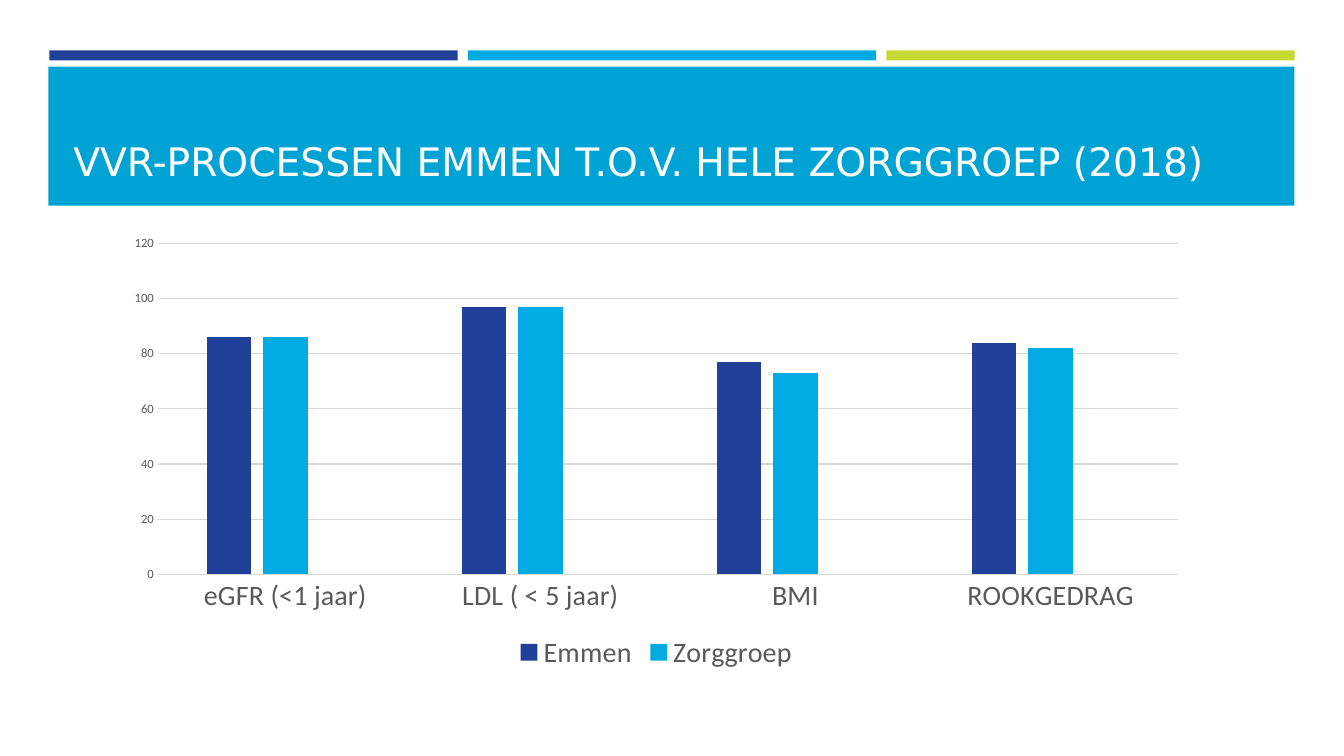
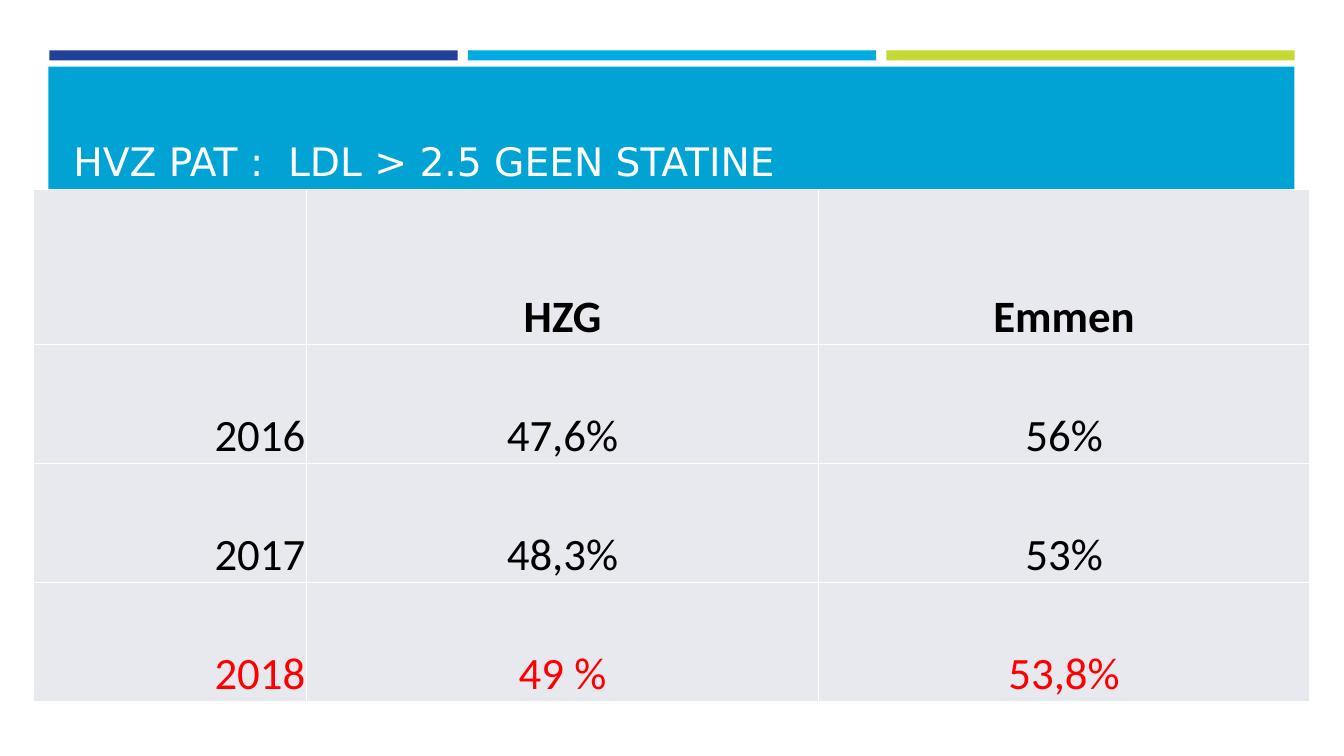
from lxml.etree import SubElement
from pptx import Presentation
from pptx.chart.data import CategoryChartData
from pptx.dml.color import RGBColor
from pptx.enum.chart import XL_CHART_TYPE, XL_LEGEND_POSITION, XL_TICK_MARK
from pptx.enum.shapes import MSO_SHAPE
from pptx.enum.text import MSO_ANCHOR, PP_ALIGN
from pptx.oxml import parse_xml
from pptx.oxml.ns import nsdecls, qn
from pptx.util import Inches, Pt

# Shared colours and fonts
NAVY = RGBColor(0x21, 0x40, 0x9A)
SKY = RGBColor(0x00, 0xAB, 0xE3)
LIME = RGBColor(0xC4, 0xD9, 0x34)
BLUE = RGBColor(0x00, 0xA3, 0xD4)
WHITE = RGBColor(0xFF, 0xFF, 0xFF)
BLACK = RGBColor(0, 0, 0)
RED = RGBColor(0xFF, 0, 0)
GREY = RGBColor(0x59, 0x59, 0x59)
RULE = RGBColor(0xD9, 0xD9, 0xD9)
PALE = RGBColor(0xE8, 0xE8, 0xEF)
HEAD, BODY = "DejaVu Sans", "Calibri"


def put(item, **vals):
    for key, val in vals.items():
        setattr(item, key, val)


def style(font, size, color, name=BODY, bold=False):
    put(font, size=Pt(size), name=name, bold=bold)
    font.color.rgb = color


def rule(line):
    line.color.rgb = RULE
    line.width = Pt(0.75)


def border(cell, color):
    props = cell._tc.get_or_add_tcPr()
    for side in "LRTB":
        props.append(parse_xml(
            f'<a:ln{side} {nsdecls("a")} w="12700"><a:solidFill>'
            f'<a:srgbClr val="{color}"/></a:solidFill></a:ln{side}>'))


class Deck:
    def __init__(self):
        self.prs = Presentation()
        put(self.prs, slide_width=Inches(13.33), slide_height=Inches(7.5))

    def slide(self, title):
        page = self.prs.slides.add_slide(self.prs.slide_layouts[6])
        self.shapes = page.shapes
        # Three strips above the title band
        for i, color in enumerate((NAVY, SKY, LIME)):
            self.rect(0.49 + i * 4.15, 0.5, 4.05, 0.1, color)
        self.rect(0.48, 0.66, 12.36, 1.38, BLUE)
        self.title(title)

    def rect(self, x, y, w, h, color):
        box = self.shapes.add_shape(
            MSO_SHAPE.RECTANGLE, Inches(x), Inches(y), Inches(w), Inches(h))
        box.shadow.inherit = False
        box.fill.solid()
        box.fill.fore_color.rgb = color
        box.line.fill.background()

    def title(self, text):
        box = self.shapes.add_textbox(
            Inches(0.63), Inches(0.8), Inches(12.06), Inches(1.08))
        frame = box.text_frame
        put(frame, word_wrap=True, vertical_anchor=MSO_ANCHOR.BOTTOM, text=text)
        style(frame.paragraphs[0].runs[0].font, 28, WHITE, HEAD)

    def chart(self, x, y, w, h, cats, series):
        data = CategoryChartData()
        data.categories = cats
        for name, vals, _ in series:
            data.add_series(name, vals)
        chart = self.shapes.add_chart(
            XL_CHART_TYPE.COLUMN_CLUSTERED, Inches(x), Inches(y),
            Inches(w), Inches(h), data).chart
        put(chart, has_title=False, has_legend=True)
        style(chart.font, 10, BLACK)

        # Columns
        plot = chart.plots[0]
        put(plot, gap_width=219, overlap=-27, vary_by_categories=False)
        for bar, (_, _, color) in zip(plot.series, series):
            bar.format.fill.solid()
            bar.format.fill.fore_color.rgb = color

        # Axes
        for axis, size in ((chart.category_axis, 20), (chart.value_axis, 9)):
            put(axis, major_tick_mark=XL_TICK_MARK.NONE,
                minor_tick_mark=XL_TICK_MARK.NONE)
            style(axis.tick_labels.font, size, GREY)
        rule(chart.category_axis.format.line)
        axis = chart.value_axis
        put(axis, minimum_scale=0, maximum_scale=120, major_unit=20)
        axis.format.line.fill.background()
        rule(axis.major_gridlines.format.line)

        # Legend, without the empty series
        legend = chart.legend
        put(legend, position=XL_LEGEND_POSITION.BOTTOM, include_in_layout=False)
        style(legend.font, 20, GREY)
        place = legend._element.find(qn("c:legendPos"))
        for i, (_, vals, _) in enumerate(series):
            if not any(vals):
                entry = SubElement(legend._element, qn("c:legendEntry"))
                SubElement(entry, qn("c:idx")).set("val", str(i))
                SubElement(entry, qn("c:delete")).set("val", "1")
                place.addnext(entry)

    def table(self, x, y, cols, tall, rows):
        table = self.shapes.add_table(
            len(rows), len(cols), Inches(x), Inches(y),
            Inches(sum(cols)), Inches(sum(tall))).table
        put(table, first_row=False, horz_banding=False)
        for col, w in zip(table.columns, cols):
            col.width = Inches(w)
        for row, h in zip(table.rows, tall):
            row.height = Inches(h)
        for r, row in enumerate(rows):
            color = RED if r == len(rows) - 1 else BLACK
            for c, text in enumerate(row):
                self.cell(table.cell(r, c), text, color, bold=r == 0,
                          align=PP_ALIGN.CENTER if c else PP_ALIGN.RIGHT)

    def cell(self, cell, text, color, bold, align):
        edge = Inches(0.01)
        put(cell, vertical_anchor=MSO_ANCHOR.BOTTOM, margin_left=edge,
            margin_right=edge, margin_top=edge, margin_bottom=0)
        border(cell, WHITE)
        cell.fill.solid()
        cell.fill.fore_color.rgb = PALE
        if text:
            cell.text = text
            para = cell.text_frame.paragraphs[0]
            para.alignment = align
            style(para.runs[0].font, 32, color, bold=bold)


def main():
    deck = Deck()

    # Processes compared; the empty series keeps room beside each pair
    deck.slide("VVR-PROCESSEN EMMEN T.O.V. HELE ZORGGROEP (2018)")
    deck.chart(
        1.12, 2.25, 10.78, 4.45,
        ["eGFR (<1 jaar)", "LDL ( < 5 jaar)", "BMI", "ROOKGEDRAG"],
        [("Emmen", (86, 97, 77, 84), NAVY),
         ("Zorggroep", (86, 97, 73, 82), SKY),
         ("Series 3", (None,) * 4, SKY)])

    # Share without statin, by year
    deck.slide("HVZ PAT :  LDL > 2.5 GEEN STATINE")
    deck.table(
        0.33, 1.88, (2.71, 5.08, 4.87), (1.54, 1.18, 1.18, 1.18),
        [("", "HZG", "Emmen"),
         ("2016", "47,6%", "56%"),
         ("2017", "48,3%", "53%"),
         ("2018", "49 %", "53,8%")])

    deck.prs.save("out.pptx")


if __name__ == "__main__":
    main()
